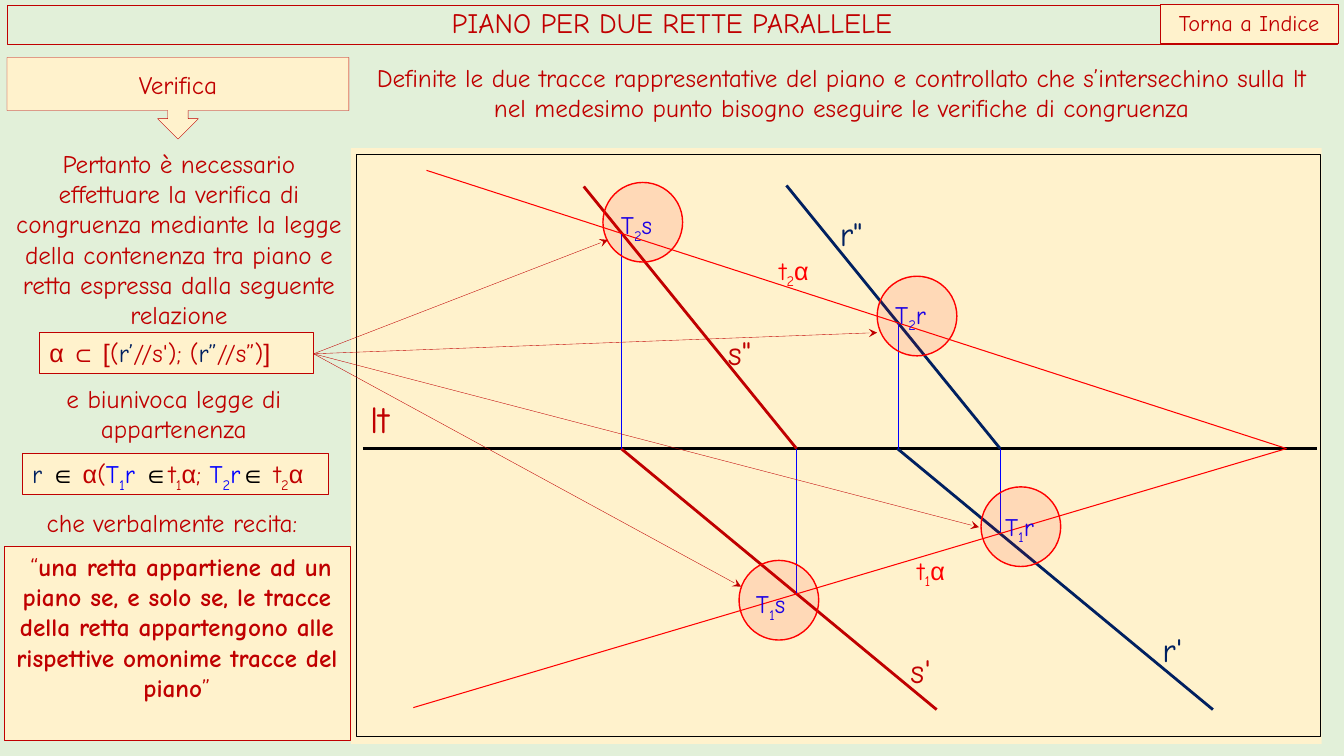
"""Builds the slide on the plane through two parallel lines and its congruence checks."""
from lxml.etree import SubElement
from pptx import Presentation
from pptx.dml.color import RGBColor
from pptx.enum.shapes import MSO_CONNECTOR, MSO_SHAPE
from pptx.enum.text import MSO_ANCHOR, MSO_AUTO_SIZE, PP_ALIGN
from pptx.oxml.ns import qn
from pptx.util import Inches, Pt

RED = RGBColor(0xC0, 0x00, 0x00)
BRIGHT = RGBColor(0xFF, 0x00, 0x00)
NAVY = RGBColor(0x00, 0x20, 0x60)
BLUE = RGBColor(0x00, 0x00, 0xFF)
BLACK = RGBColor(0x00, 0x00, 0x00)
CREAM = RGBColor(0xFF, 0xF2, 0xCC)
GREEN = RGBColor(0xE2, 0xF0, 0xD9)
HAND, PLAIN = "Comic Neue", "Arial"
COLUMNS, ROWS = 13.33, 7.5

TITLE = "PIANO PER DUE RETTE PARALLELE"
INTRO = ("Definite le due tracce rappresentative del piano e controllato che "
         "s’intersechino sulla lt nel medesimo punto bisogno eseguire le verifiche di congruenza")
REASON = ("Pertanto è necessario effettuare la verifica di congruenza mediante la legge "
          "della contenenza tra piano e retta espressa dalla seguente relazione")
RULE = ("una retta appartiene ad un piano se, e solo se, le tracce della retta "
        "appartengono alle rispettive omonime tracce del piano")


def indexed(letter, index, ending, colour, font=HAND):
    return [(letter, {"colour": colour}), (index, {"colour": colour, "baseline": -25}),
            (ending, {"colour": colour, "font": font})]


MEMBER = ("∈", {"colour": BLACK, "font": PLAIN})
CONTAINMENT = [("α ⊂ [", {"font": PLAIN}), ("(", {}), ("r’", {"colour": NAVY}), ("//s'); (", {}),
               ("r”", {"colour": NAVY}), ("//s”)", {}), ("]", {"font": PLAIN})]
BELONGING = [("r ", {"colour": NAVY}), ("∈ ", MEMBER[1]), ("α", {"font": PLAIN}), ("(", {}),
             *indexed("T", "1", "r ", BLUE), MEMBER, *indexed("t", "1", "α", RED, PLAIN), ("; ", {}),
             *indexed("T", "2", "r", BLUE), MEMBER, *indexed(" t", "2", "α", RED, PLAIN)]
QUOTE = [(" “", {}), (RULE, {"bold": True}), ("”", {})]

PANELS = [
    ((11.51, 0.04, 1.76, 0.39), "Torna a Indice", {"size": 16, "align": PP_ALIGN.CENTER}),
    ((0.39, 3.3, 2.72, 0.4), CONTAINMENT, {}),
    ((0.22, 4.5, 3.04, 0.4), BELONGING, {}),
    ((0.04, 5.42, 3.43, 1.92), QUOTE, {"align": PP_ALIGN.CENTER}),
]
CAPTIONS = [
    ((3.55, 0.57, 9.59, 0.71), INTRO),
    ((0.06, 1.42, 3.43, 1.92), REASON),
    ((0.01, 3.75, 3.43, 0.71), "e biunivoca legge di appartenenza"),
    ((-0.01, 4.98, 3.43, 0.4), "che verbalmente recita:"),
]
LINE_LABELS = [
    ((3.67, 3.93, 0.29, 0.46), "lt", RED, 27),
    ((11.53, 6.24, 0.3, 0.41), "r'", NAVY, 24),
    ((8.33, 2.11, 0.31, 0.41), "r\"", NAVY, 24),
    ((7.22, 3.29, 0.31, 0.41), "s\"", RED, 24),
    ((9.03, 6.45, 0.3, 0.41), "s'", RED, 24),
]
GROUND = 4.45
VERTEX = (12.76, GROUND)
LINES = [
    ((3.6, GROUND), (13.06, GROUND), BLACK, 0),
    ((7.9, GROUND), (5.79, 1.85), RED, 0),
    ((9.29, 7.04), (6.16, GROUND), RED, 0),
    ((9.92, GROUND), (7.8, 1.84), NAVY, 0),
    ((12.03, 7.04), (8.9, GROUND), NAVY, 0),
    ((7.9, GROUND), (7.9, 5.89), BLUE, 0.25),
    ((6.16, GROUND), (6.16, 2.31), BLUE, 0.25),
    ((8.91, GROUND), (8.91, 3.2), BLUE, 0.25),
    ((9.92, GROUND), (9.92, 5.28), BLUE, 0.25),
    ((4.23, 1.69), VERTEX, BRIGHT, 0.75),
    ((4.1, 7.02), VERTEX, BRIGHT, 0.75),
]
PLANE_TRACES = [("1", (8.89, 5.46)), ("2", (7.53, 2.48))]
POINT_TRACES = [
    ("2", "s", (6.06, 2.03), (5.98, 1.81), (6.03, 2.38)),
    ("2", "r", (8.78, 2.92), (8.7, 2.74), (8.7, 3.3)),
    ("1", "r", (9.87, 5.02), (9.73, 4.83), (9.71, 5.23)),
    ("1", "s", (7.4, 5.79), (7.33, 5.56), (7.35, 5.82)),
]
DIAMETER = 0.79
ARROW_START = (3.11, 3.51)

presentation = Presentation()
presentation.slide_width, presentation.slide_height = Inches(COLUMNS), Inches(ROWS)
slide = presentation.slides.add_slide(presentation.slide_layouts[5])
slide.background.fill.solid()
slide.background.fill.fore_color.rgb = GREEN


def write(shape, text, size=18, colour=RED, align=PP_ALIGN.LEFT, anchor=MSO_ANCHOR.TOP,
          wrap=True, inset=None, spacing=None):
    frame = shape.text_frame
    frame.auto_size, frame.word_wrap, frame.vertical_anchor = MSO_AUTO_SIZE.NONE, wrap, anchor
    if inset is not None:
        frame.margin_left = frame.margin_top = frame.margin_right = frame.margin_bottom = inset
    paragraph = frame.paragraphs[0]
    paragraph.alignment, paragraph.line_spacing = align, spacing
    for words, style in [(text, {})] if isinstance(text, str) else text:
        run = paragraph.add_run()
        run.text = words
        run.font.size, run.font.name = Pt(size), style.get("font", HAND)
        run.font.bold = style.get("bold", False)
        run.font.color.rgb = style.get("colour", colour)
        if "baseline" in style:
            run.font._element.set("baseline", str(style["baseline"] * 1000))


def outline(shape, colour, width):
    shape.line.color.rgb, shape.line.width = colour, Pt(width)


def add_box(box, kind=MSO_SHAPE.RECTANGLE, fill=CREAM, line=None, width=0.25, alpha=None):
    shape = slide.shapes.add_shape(kind, *map(Inches, box))
    shape.shadow.inherit = False
    shape.fill.solid()
    shape.fill.fore_color.rgb = fill
    if alpha is not None:
        colour = shape.element.find(".//" + qn("a:srgbClr"))
        SubElement(colour, qn("a:alpha")).set("val", str(alpha * 1000))
    if line is None:
        shape.line.fill.background()
    else:
        outline(shape, line, width)
    return shape


def add_line(start, end, colour, width, arrow=False):
    line = slide.shapes.add_connector(MSO_CONNECTOR.STRAIGHT, *map(Inches, start + end))
    outline(line, colour, width)
    if arrow:
        SubElement(line.line._get_or_add_ln(), qn("a:tailEnd")).set("type", "stealth")
    SubElement(line.element.spPr, qn("a:effectLst"))


def add_caption(box, text, **style):
    write(slide.shapes.add_textbox(*map(Inches, box)), text, **style)


title = slide.shapes.title
title.left, title.top, title.width, title.height = map(Inches, (0.07, 0.05, 13.19, 0.39))
outline(title, RED, 0.25)
write(title, TITLE, size=20, align=PP_ALIGN.CENTER, anchor=MSO_ANCHOR.MIDDLE, spacing=0.9)

callout = add_box((0.07, 0.57, 3.39, 0.81), MSO_SHAPE.DOWN_ARROW_CALLOUT, line=RED)
write(callout, "Verifica", align=PP_ALIGN.CENTER, anchor=MSO_ANCHOR.MIDDLE)

add_box((3.48, 1.47, 9.63, 5.91))
add_box((3.54, 1.53, 9.56, 5.78), line=BLACK, width=0)
for box, text, colour, size in LINE_LABELS:
    write(add_box(box), text, size=size, colour=colour, wrap=False, inset=0)
for line in LINES:
    add_line(*line)
for index, corner in PLANE_TRACES:
    add_caption((*corner, 0.69, 0.4), indexed("t", index, "α", BRIGHT, PLAIN), align=PP_ALIGN.CENTER)
for index, name, label, circle, tip in POINT_TRACES:
    add_caption((*label, 0.6, 0.4), indexed("T", index, name, BLUE))
    add_box((*circle, DIAMETER, DIAMETER), MSO_SHAPE.OVAL, fill=BRIGHT, line=BRIGHT, width=1, alpha=10)
    add_line(ARROW_START, tip, RED, 0.25, arrow=True)

for box, text in CAPTIONS:
    add_caption(box, text, align=PP_ALIGN.CENTER)
for box, text, style in PANELS:
    write(add_box(box, line=RED), text, **style)

presentation.save("out.pptx")
